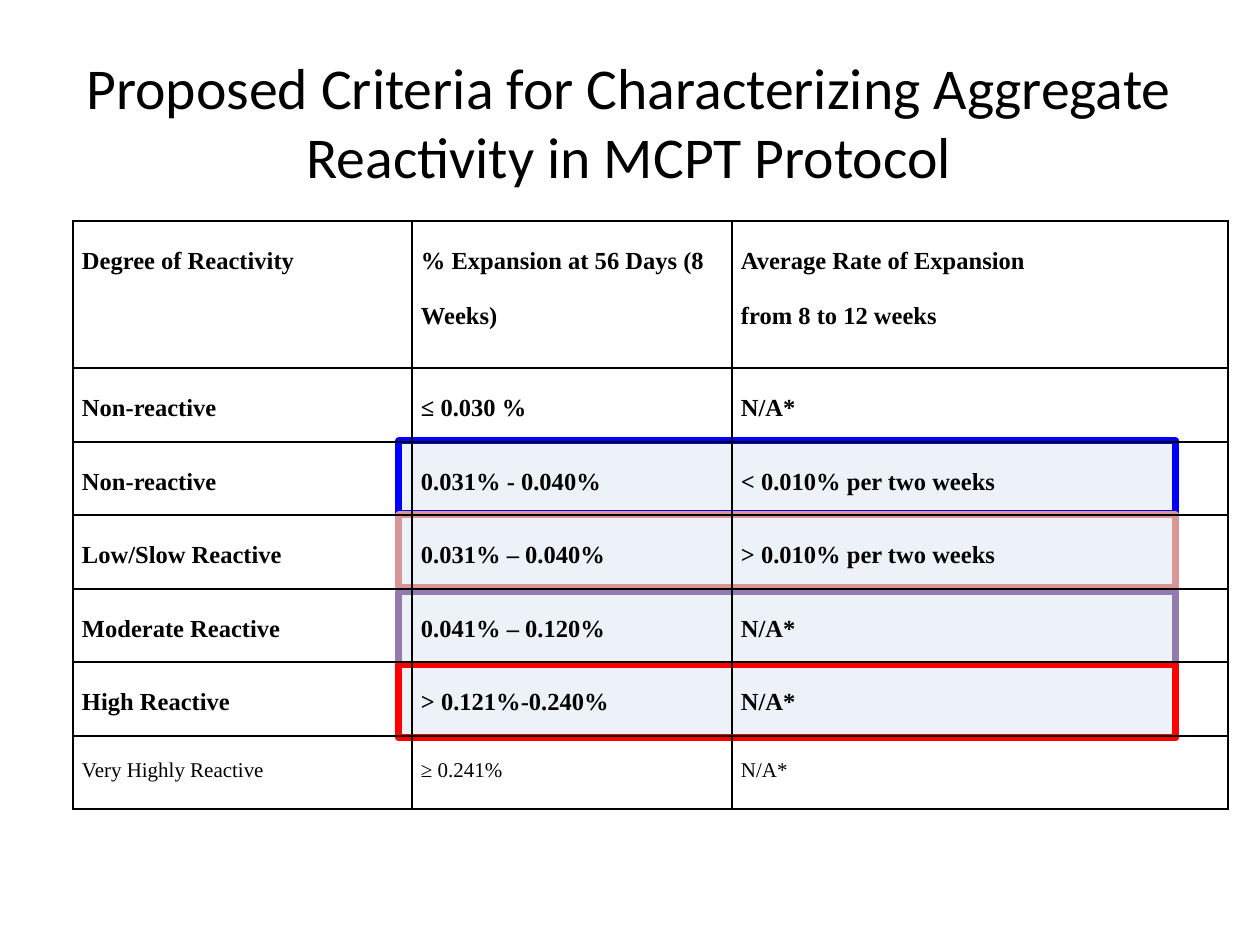
"""Build the slide of proposed MCPT aggregate reactivity criteria."""
from dataclasses import dataclass

from lxml.etree import SubElement
from pptx import Presentation
from pptx.dml.color import RGBColor as RGB
from pptx.enum.shapes import MSO_SHAPE as Shape
from pptx.enum.text import MSO_ANCHOR as Anchor, PP_ALIGN as Align
from pptx.oxml import parse_xml
from pptx.oxml.ns import nsdecls, qn
from pptx.util import Emu, Pt


@dataclass(frozen=True)
class Theme:
    title_font: str = "Calibri"
    table_font: str = "Times New Roman"
    title_size: int = 33
    body_size: int = 14
    last_size: int = 12
    text: str = "000000"
    tint: str = "4F81BD"
    tint_alpha: int = 10
    frame_width: int = 4
    border_width: int = 1
    blue: str = "0000FF"
    pink: str = "D99694"
    purple: str = "937BB0"
    red: str = "FF0000"


@dataclass(frozen=True)
class Frame:
    top: int
    color: str


@dataclass(frozen=True)
class Criterion:
    degree: str
    expansion: str
    rate: str
    height: int
    size: int = Theme.body_size
    bold: bool = True


T = Theme()
FRAME_LEFT, FRAME_WIDTH, FRAME_HEIGHT = 399, 777, 73
TABLE_LEFT, TABLE_TOP = 73, 221
COL_WIDTHS = (339, 320, 496)
TITLE = "Proposed Criteria for Characterizing Aggregate Reactivity in MCPT Protocol"
FRAMES = (
    Frame(441, T.blue),
    Frame(515, T.pink),
    Frame(592, T.purple),
    Frame(665, T.red),
)
CRITERIA = (
    Criterion("Degree of Reactivity", "% Expansion at 56 Days (8 Weeks)",
              "Average Rate of Expansion\nfrom 8 to 12 weeks", 147),
    Criterion("Non-reactive", "≤ 0.030 %", "N/A*", 74),
    Criterion("Non-reactive", "0.031% - 0.040%", "< 0.010% per two weeks", 73),
    Criterion("Low/Slow Reactive", "0.031% – 0.040%", "> 0.010% per two weeks", 74),
    Criterion("Moderate Reactive", "0.041% – 0.120%", "N/A*", 73),
    Criterion("High Reactive", "> 0.121%-0.240%", "N/A*", 74),
    Criterion("Very Highly Reactive", "≥ 0.241%", "N/A*", 73, T.last_size, False),
)


def px(n: int) -> Emu:
    return Emu(round(n * 914400 / 126))


def apply(obj, values: dict) -> None:
    for name, value in values.items():
        setattr(obj, name, value)


def set_font(font, name: str, size: int, bold: bool = False) -> None:
    apply(font, {"name": name, "size": Pt(size), "bold": bold})
    font.color.rgb = RGB.from_string(T.text)


def add_title(s) -> None:
    tf = s.shapes.add_textbox(px(73), px(32), px(1112), px(178)).text_frame
    apply(tf, {"word_wrap": True, "vertical_anchor": Anchor.MIDDLE, "text": TITLE})
    p = tf.paragraphs[0]
    p.alignment = Align.CENTER
    set_font(p.runs[0].font, T.title_font, T.title_size)


def add_frame(s, frame: Frame) -> None:
    sp = s.shapes.add_shape(Shape.RECTANGLE, px(FRAME_LEFT), px(frame.top),
                            px(FRAME_WIDTH), px(FRAME_HEIGHT))
    sp.shadow.inherit = False
    sp.fill.solid()
    sp.fill.fore_color.rgb = RGB.from_string(T.tint)
    color = sp.fill._xPr.find(qn("a:solidFill"))[0]
    SubElement(color, qn("a:alpha")).set("val", str(T.tint_alpha * 1000))
    sp.line.color.rgb = RGB.from_string(frame.color)
    sp.line.width = Pt(T.frame_width)
    SubElement(sp.line._get_or_add_ln(), qn("a:round"))


def add_borders(cell) -> None:
    tc_pr = cell._tc.get_or_add_tcPr()
    for i, side in enumerate("LRTB"):
        tc_pr.insert(i, parse_xml(
            f'<a:ln{side} {nsdecls("a")} w="{Pt(T.border_width)}"><a:solidFill>'
            f'<a:srgbClr val="{T.text}"/></a:solidFill></a:ln{side}>'))


def fill_cell(cell, text: str, row: Criterion) -> None:
    apply(cell, {"margin_left": px(9), "margin_right": px(9), "margin_top": 0,
                 "margin_bottom": 0, "vertical_anchor": Anchor.TOP, "text": text})
    cell.fill.background()
    add_borders(cell)
    for p in cell.text_frame.paragraphs:
        p.line_spacing = 2.0
        for r in p.runs:
            set_font(r.font, T.table_font, row.size, row.bold)


def add_criteria(s) -> None:
    height = sum(row.height for row in CRITERIA)
    table = s.shapes.add_table(len(CRITERIA), len(COL_WIDTHS), px(TABLE_LEFT),
                               px(TABLE_TOP), px(sum(COL_WIDTHS)), px(height)).table
    apply(table, {"first_row": False, "horz_banding": False})
    for col, width in zip(table.columns, COL_WIDTHS):
        col.width = px(width)
    for line, row in zip(table.rows, CRITERIA):
        line.height = px(row.height)
        for cell, text in zip(line.cells, (row.degree, row.expansion, row.rate)):
            fill_cell(cell, text, row)


def main() -> None:
    prs = Presentation()
    apply(prs, {"slide_width": px(1260), "slide_height": px(945)})
    s = prs.slides.add_slide(prs.slide_layouts[6])
    add_title(s)
    for frame in FRAMES:
        add_frame(s, frame)
    add_criteria(s)
    prs.save("out.pptx")


if __name__ == "__main__":
    main()
